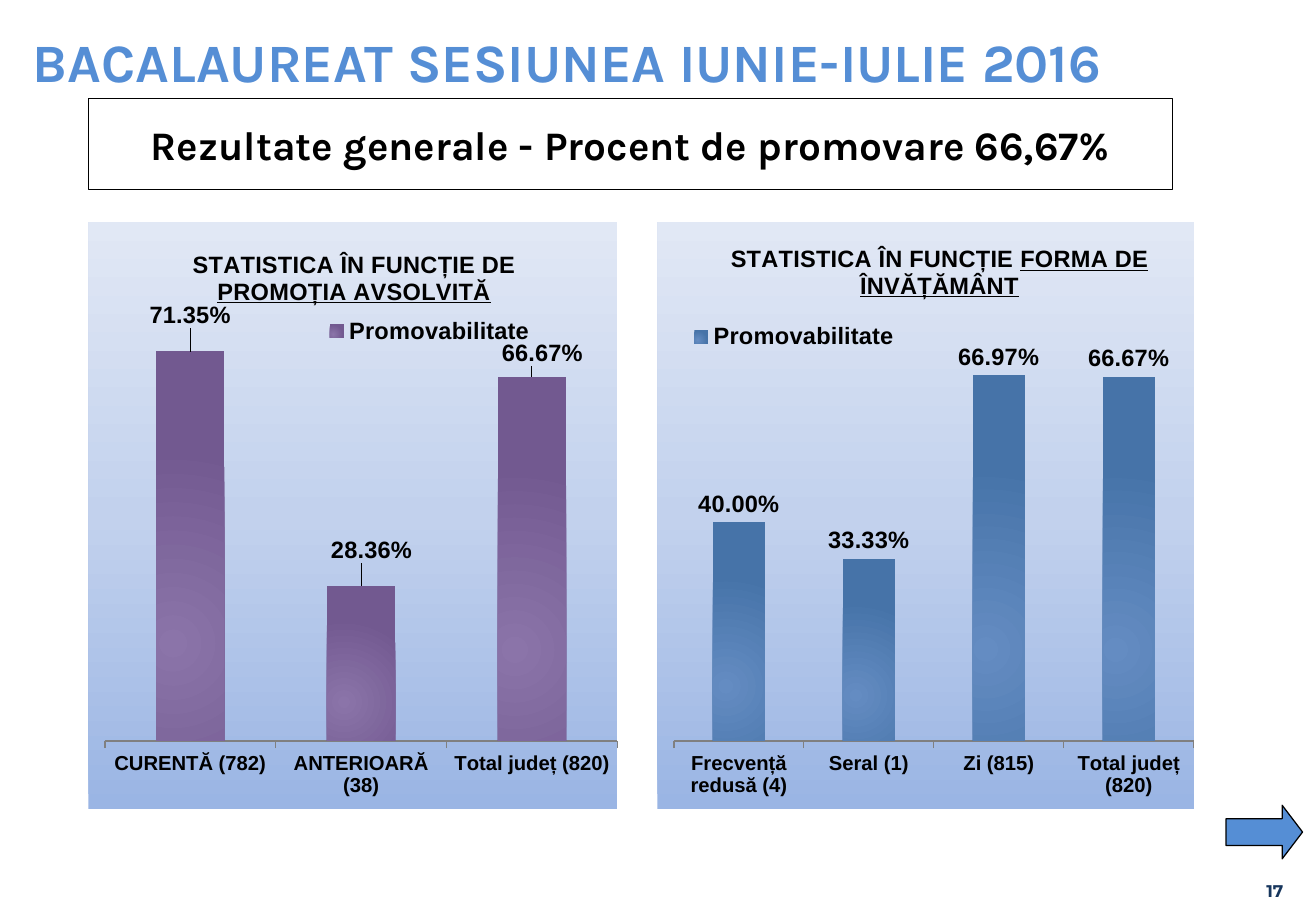
from lxml import etree
from pptx import Presentation
from pptx.chart.data import CategoryChartData
from pptx.dml.color import RGBColor
from pptx.enum.chart import XL_CHART_TYPE as ChartType, XL_LABEL_POSITION as LabelPos
from pptx.enum.chart import XL_LEGEND_POSITION as LegendPos, XL_TICK_MARK as TickMark
from pptx.enum.shapes import MSO_SHAPE as Shape
from pptx.enum.text import MSO_ANCHOR as Anchor, MSO_AUTO_SIZE as AutoSize, PP_ALIGN as Align
from pptx.oxml import parse_xml
from pptx.oxml.ns import nsdecls, qn
from pptx.util import Cm, Pt

BLACK = RGBColor(0x00, 0x00, 0x00)
SKY = RGBColor(0x55, 0x8E, 0xD5)
NAVY = RGBColor(0x17, 0x36, 0x5D)
AXIS_GREY = RGBColor(0x80, 0x80, 0x80)
BACKDROP = [RGBColor(0x9A, 0xB5, 0xE4), RGBColor(0xC2, 0xD1, 0xED), RGBColor(0xE1, 0xE8, 0xF5)]
PURPLES = [RGBColor(0x8B, 0x74, 0xA9), RGBColor(0x72, 0x59, 0x90)]
BLUES = [RGBColor(0x64, 0x8C, 0xC2), RGBColor(0x46, 0x73, 0xA8)]
UPWARD = '<a:lin ang="16200000" scaled="0"/>'
CIRCULAR = ('<a:path path="circle"><a:fillToRect l="50000" t="100000" '
            'r="100000" b="50000"/></a:path>')


def style(font, size, color=BLACK, name="Arial"):
    font.name, font.size, font.bold = name, Pt(size), True
    font.color.rgb = color


def write(frame, text, size, color, name, align, anchor, inset=None):
    frame.word_wrap = True
    frame.auto_size = AutoSize.NONE
    frame.vertical_anchor = anchor
    if inset is not None:
        frame.margin_left = frame.margin_right = frame.margin_top = frame.margin_bottom = inset
    paragraph = frame.paragraphs[0]
    paragraph.text = text
    paragraph.alignment = align
    style(paragraph.font, size, color, name)


def add_outlined(slide, preset, left, top, width, height):
    shape = slide.shapes.add_shape(preset, Cm(left), Cm(top), Cm(width), Cm(height))
    shape.shadow.inherit = False
    shape.line.color.rgb = BLACK
    shape.line.width = Pt(0.75)
    return shape


def gradient(colors, direction):
    step = 100000 // (len(colors) - 1)
    stops = "".join(f'<a:gs pos="{i * step}"><a:srgbClr val="{color}"/></a:gs>'
                    for i, color in enumerate(colors))
    return parse_xml(f'<a:gradFill {nsdecls("a")} rotWithShape="1">'
                     f'<a:gsLst>{stops}</a:gsLst>{direction}</a:gradFill>')


def set_layout(parent, index, settings):
    for old in parent.findall(qn("c:layout")):
        parent.remove(old)
    layout = etree.Element(qn("c:layout"))
    manual = etree.SubElement(layout, qn("c:manualLayout"))
    for tag, value in settings.items():
        etree.SubElement(manual, qn(f"c:{tag}")).set("val", str(value))
    parent.insert(index, layout)


def at_edge(x, y, **size):
    return {"xMode": "edge", "yMode": "edge", "x": x, "y": y, **size}


def add_rate_chart(slide, left, width, title, underlined, rates, colors,
                   title_at, legend_at, label_shifts=()):
    data = CategoryChartData(number_format="0.00%")
    data.categories = list(rates)
    data.add_series("Promovabilitate", list(rates.values()))
    chart = slide.shapes.add_chart(ChartType.COLUMN_CLUSTERED, Cm(left), Cm(4.65),
                                   Cm(width), Cm(12.27), data).chart
    style(chart.font, 12)
    root = chart.element

    chart.has_title = True
    heading = chart.chart_title.text_frame.paragraphs[0]
    style(heading.font, 14)
    for text, underline in ((title, False), (underlined, True)):
        run = heading.add_run()
        run.text = text
        run.font.underline = underline
    set_layout(root.find(".//" + qn("c:title")), 1, at_edge(*title_at))

    chart.has_legend = True
    chart.legend.position = LegendPos.LEFT
    chart.legend.include_in_layout = False
    style(chart.legend.font, 14)
    set_layout(root.find(".//" + qn("c:legend")), 1, at_edge(*legend_at, w=0.41, h=0.05))

    chart.value_axis.minimum_scale = 0
    chart.value_axis.maximum_scale = 0.8
    chart.value_axis.has_major_gridlines = False
    chart.value_axis.visible = False
    chart.category_axis.major_tick_mark = TickMark.OUTSIDE
    chart.category_axis.format.line.color.rgb = AXIS_GREY
    style(chart.category_axis.tick_labels.font, 12)

    plot = chart.plots[0]
    plot.gap_width = 150
    plot.vary_by_categories = False
    series = plot.series[0]
    series.format.line.fill.background()
    labels = series.data_labels
    labels.show_value = True
    labels.number_format = "0.00%"
    labels.number_format_is_linked = False
    labels.position = LabelPos.OUTSIDE_END
    style(labels.font, 14)
    for i, _ in enumerate(label_shifts):
        label = series.points[i].data_label
        label.position = LabelPos.OUTSIDE_END
        style(label.font, 14)
    for label, (x, y) in zip(root.findall(".//" + qn("c:dLbl")), label_shifts):
        set_layout(label, 1, {"x": x, "y": y})

    root.find(".//" + qn("c:ser")).find(qn("c:spPr")).insert(0, gradient(colors, CIRCULAR))
    set_layout(root.find(".//" + qn("c:plotArea")), 0,
               {"layoutTarget": "inner", **at_edge(0.031, 0.139, w=0.969, h=0.745)})
    area = parse_xml(f'<c:spPr {nsdecls("c", "a")}><a:ln><a:noFill/></a:ln></c:spPr>')
    area.insert(0, gradient(BACKDROP, UPWARD))
    root.find(qn("c:chart")).addnext(area)


def main():
    deck = Presentation()
    deck.slide_width, deck.slide_height = Cm(27.51), Cm(19.05)
    slide = deck.slides.add_slide(deck.slide_layouts[5])

    title = slide.shapes.title
    title.left, title.top, title.width, title.height = Cm(0.43), Cm(0.46), Cm(25.78), Cm(1.6)
    write(title.text_frame, "BACALAUREAT SESIUNEA IUNIE-IULIE 2016", 32, SKY, "Karla",
          Align.LEFT, Anchor.TOP)

    summary = add_outlined(slide, Shape.RECTANGLE, 1.85, 2.06, 22.66, 1.9)
    summary.fill.background()
    write(summary.text_frame, "Rezultate generale - Procent de promovare 66,67%", 24, BLACK,
          "Karla", Align.CENTER, Anchor.MIDDLE, Cm(0.13))

    add_rate_chart(
        slide, 1.85, 11.07, "STATISTICA ÎN FUNCȚIE DE ", "PROMOȚIA AVSOLVITĂ",
        {"CURENTĂ (782)": 0.7135, "ANTERIOARĂ (38)": 0.2836, "Total județ (820)": 0.6667},
        PURPLES, (0.19, 0.04), (0.44, 0.16), ((0, -0.03), (0.02, -0.03), (0.02, -0.01)))
    add_rate_chart(
        slide, 13.74, 11.23, "STATISTICA ÎN FUNCȚIE ", "FORMA DE ÎNVĂȚĂMÂNT",
        {"Frecvență redusă (4)": 0.4, "Seral (1)": 0.3333, "Zi (815)": 0.6697,
         "Total județ (820)": 0.6667},
        BLUES, (0.13, 0.03), (0.05, 0.17))

    next_arrow = add_outlined(slide, Shape.RIGHT_ARROW, 25.63, 16.84, 1.6, 1.12)
    next_arrow.adjustments[1] = 0.38
    next_arrow.fill.solid()
    next_arrow.fill.fore_color.rgb = SKY

    page_number = slide.shapes.add_textbox(Cm(24.54), Cm(17.83), Cm(2.29), Cm(1.02))
    write(page_number.text_frame, "17", 10, NAVY, "Montserrat", Align.RIGHT, Anchor.BOTTOM, 0)

    deck.save("out.pptx")


if __name__ == "__main__":
    main()
